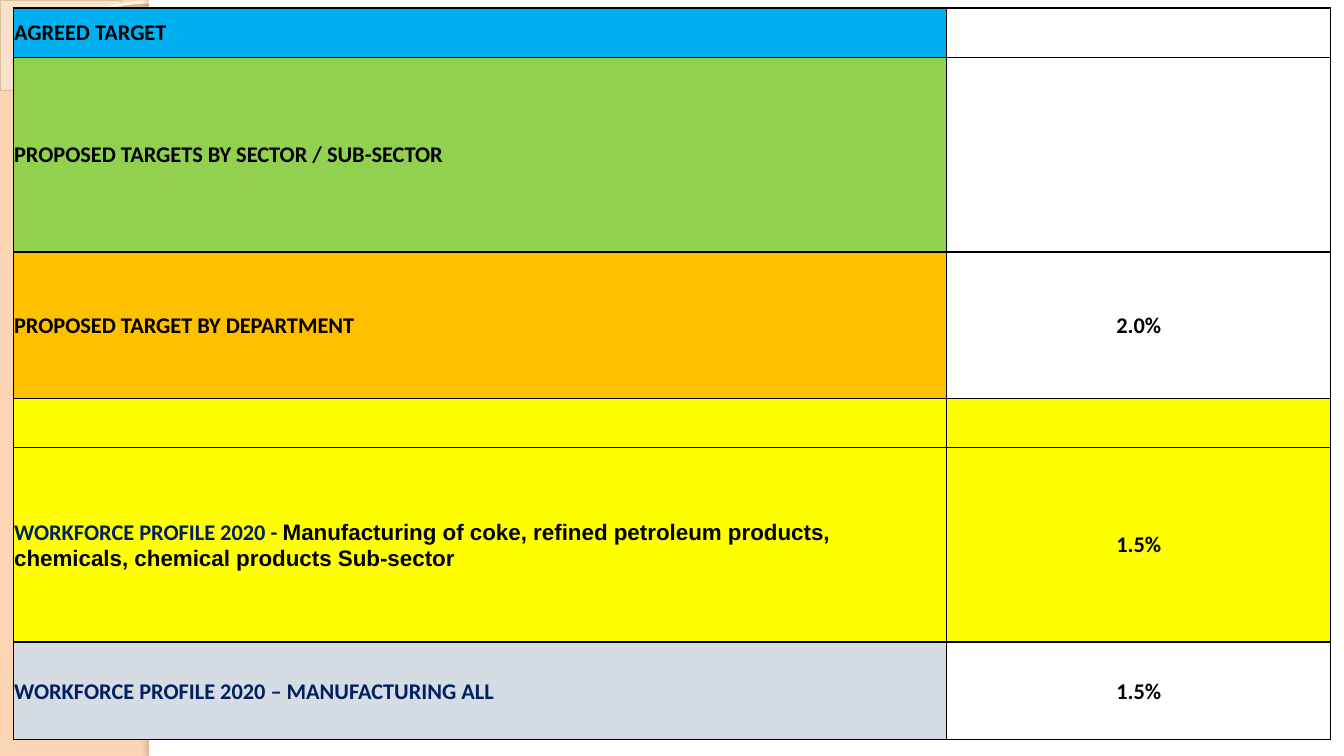
from lxml.etree import SubElement
from pptx import Presentation
from pptx.dml.color import RGBColor
from pptx.enum.shapes import MSO_SHAPE
from pptx.enum.text import MSO_ANCHOR, PP_ALIGN
from pptx.oxml.ns import qn
from pptx.util import Inches, Pt

BLACK, NAVY, WHITE, YELLOW = "000000", "002060", "FFFFFF", "FFFF00"
COLUMN_WIDTHS = [9.26, 3.81]
TARGET_ROWS = [
    (0.49, [("AGREED TARGET", "Calibri", BLACK)], "00B0F0", "", None),
    (1.93, [("PROPOSED TARGETS BY SECTOR / SUB-SECTOR", "Calibri", BLACK)], "92D050", "", None),
    (1.45, [("PROPOSED TARGET BY DEPARTMENT", "Calibri", BLACK)], "FFC000", "2.0%", None),
    (0.49, [], YELLOW, "", YELLOW),
    (1.93, [("WORKFORCE PROFILE 2020 - ", "Calibri", NAVY),
            ("Manufacturing of coke, refined petroleum products, "
             "chemicals, chemical products Sub-sector", "Arial", BLACK)], YELLOW, "1.5%", YELLOW),
    (0.97, [("WORKFORCE PROFILE 2020 – MANUFACTURING ALL", "Calibri", NAVY)], "D6DCE4", "1.5%", None),
]


def color(value):
    return RGBColor.from_string(value)


def paint(target, value):
    if value is None:
        target.fill.background()
    else:
        target.fill.solid()
        target.fill.fore_color.rgb = color(value)


def add_alpha(color_element, percent):
    SubElement(color_element, qn("a:alpha"), val=str(percent * 1000))


def add_shadow(shape, value, alpha, blur, distance, angle):
    effects = shape._element.spPr.find(qn("a:effectLst"))
    shadow = SubElement(effects, qn("a:outerShdw"), blurRad=str(Pt(blur)),
                        dist=str(Pt(distance)), dir=str(angle * 60000),
                        algn="tl", rotWithShape="0")
    add_alpha(SubElement(shadow, qn("a:srgbClr"), val=value), alpha)


def add_decoration(page, kind, box, fill=None, line=None, weight=0):
    shape = page.shapes.add_shape(kind, *map(Inches, box))
    shape.shadow.inherit = False
    paint(shape, fill)
    if line is None:
        shape.line.fill.background()
    else:
        shape.line.color.rgb = color(line)
        shape.line.width = Pt(weight)
    return shape


def draw_backdrop(page, left, top, width, height):
    paint(page.background, "FCD5B4")
    corner = add_decoration(page, MSO_SHAPE.RECTANGLE, (left, top, 1.2, 0.9), "FEFAF4", "D3C39F", 0.25)
    add_alpha(corner._element.spPr.find(qn("a:solidFill"))[0], 33)
    ring = add_decoration(page, MSO_SHAPE.OVAL, (left + 0.25, top + 0.02, 2.48, 1.86), None, "FFF5DE", 2.15)
    add_shadow(ring, "B0A68F", 85, 2, 2, 90)
    panel_left = left + 1.48
    add_decoration(page, MSO_SHAPE.RECTANGLE, (panel_left, top, width - 1.48, height), WHITE)
    edge = add_decoration(page, MSO_SHAPE.RECTANGLE, (panel_left, top, 0.11, height), WHITE)
    add_shadow(edge, "736F63", 25, 3, 3, 180)


def add_borders(cell):
    properties = cell._tc.get_or_add_tcPr()
    for position, side in enumerate(("a:lnL", "a:lnR", "a:lnT", "a:lnB")):
        line = properties.makeelement(qn(side), {"w": str(Pt(1))})
        SubElement(SubElement(line, qn("a:solidFill")), qn("a:srgbClr"), val=BLACK)
        properties.insert(position, line)


def fill_cell(cell, spans, fill, alignment):
    paint(cell, fill)
    add_borders(cell)
    cell.vertical_anchor = MSO_ANCHOR.MIDDLE
    cell.margin_left = cell.margin_right = cell.margin_top = Inches(0.01)
    cell.margin_bottom = 0
    para = cell.text_frame.paragraphs[0]
    para.alignment = alignment
    para.font.size = Pt(16)
    para.font.bold = True
    for text, font, ink in spans:
        span = para.add_run()
        span.text = text
        span.font.size = Pt(16)
        span.font.bold = True
        span.font.name = font
        span.font.color.rgb = color(ink)


def draw_targets(page, left, top):
    heights = [row[0] for row in TARGET_ROWS]
    box = (left, top, sum(COLUMN_WIDTHS), sum(heights))
    table = page.shapes.add_table(len(heights), len(COLUMN_WIDTHS), *map(Inches, box)).table
    table.first_row = table.horz_banding = False
    for column, width in zip(table.columns, COLUMN_WIDTHS):
        column.width = Inches(width)
    for row, (height, label, label_fill, value, value_fill) in zip(table.rows, TARGET_ROWS):
        row.height = Inches(height)
        value_spans = [(value, "Calibri", BLACK)] if value else []
        fill_cell(row.cells[0], label, label_fill, PP_ALIGN.LEFT)
        fill_cell(row.cells[1], value_spans, value_fill, PP_ALIGN.CENTER)


def main():
    deck = Presentation()
    deck.slide_width, deck.slide_height = Inches(13.33), Inches(7.5)
    page = deck.slides.add_slide(deck.slide_layouts[6])
    draw_backdrop(page, 0, 0, 13.33, 7.5)
    draw_targets(page, 0.13, 0.08)
    deck.save("out.pptx")


if __name__ == "__main__":
    main()
